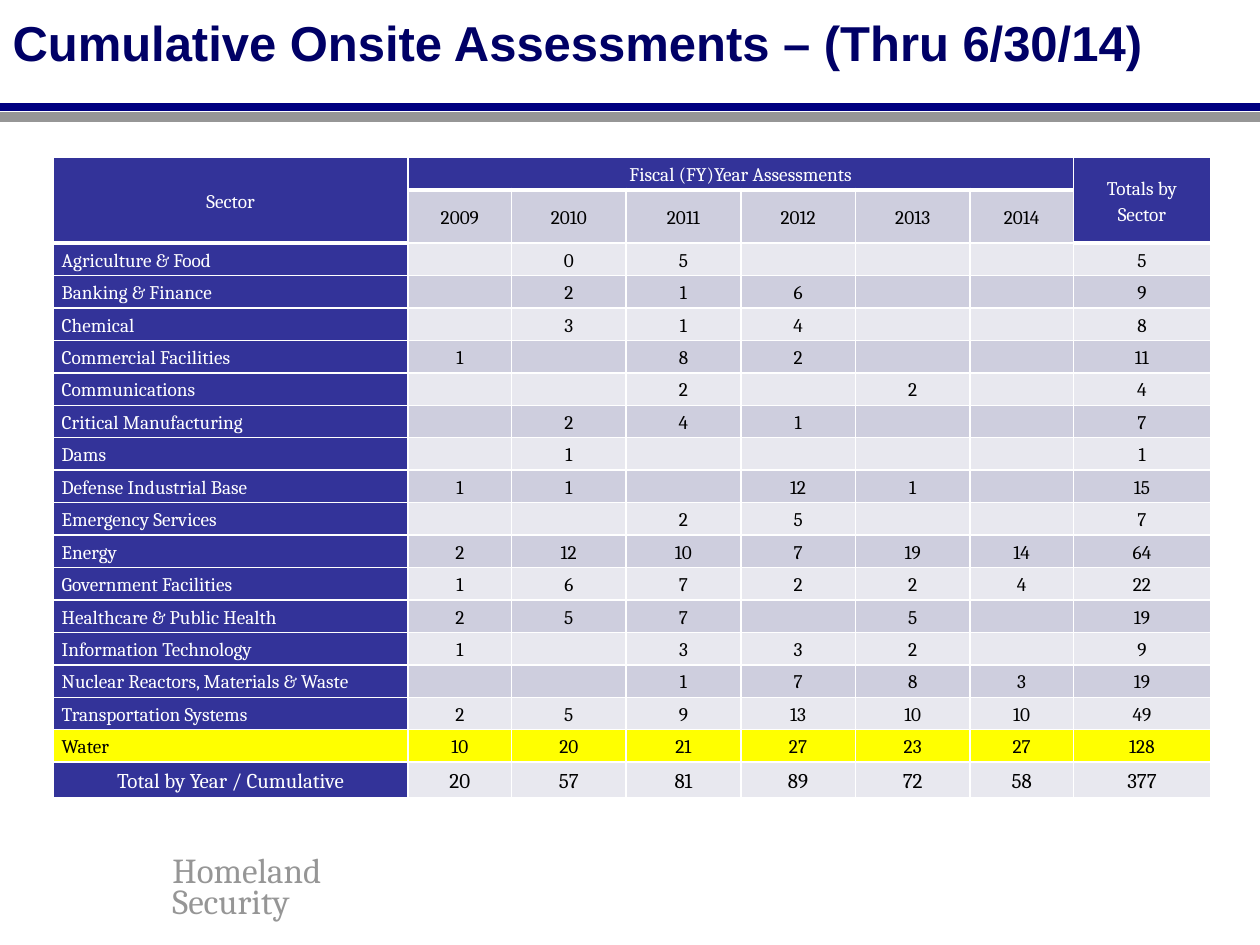
import pptx
import pptx.dml.color
import pptx.enum.shapes
import pptx.enum.text
import pptx.oxml
import pptx.oxml.ns
import pptx.util
from lxml import etree

Inches = pptx.util.Inches
Pt = pptx.util.Pt
ALIGN = pptx.enum.text.PP_ALIGN
ANCHOR = pptx.enum.text.MSO_ANCHOR

COLORS = {
    "title": "000066", "navy": "000080", "gray": "969696", "header": "333399",
    "light": "E8E8EF", "dark": "CECEDE", "highlight": "FFFF00",
    "white": "FFFFFF", "black": "000000",
}
YEARS = ["2009", "2010", "2011", "2012", "2013", "2014"]
SECTORS = {
    "Agriculture & Food": [None, 0, 5, None, None, None],
    "Banking & Finance": [None, 2, 1, 6, None, None],
    "Chemical": [None, 3, 1, 4, None, None],
    "Commercial Facilities": [1, None, 8, 2, None, None],
    "Communications": [None, None, 2, None, 2, None],
    "Critical Manufacturing": [None, 2, 4, 1, None, None],
    "Dams": [None, 1, None, None, None, None],
    "Defense Industrial Base": [1, 1, None, 12, 1, None],
    "Emergency Services": [None, None, 2, 5, None, None],
    "Energy": [2, 12, 10, 7, 19, 14],
    "Government Facilities": [1, 6, 7, 2, 2, 4],
    "Healthcare & Public Health": [2, 5, 7, None, 5, None],
    "Information Technology": [1, None, 3, 3, 2, None],
    "Nuclear Reactors, Materials & Waste": [None, None, 1, 7, 8, 3],
    "Transportation Systems": [2, 5, 9, 13, 10, 10],
    "Water": [10, 20, 21, 27, 23, 27],
}
HIGHLIGHTED = "Water"
COLUMN_WIDTHS = [2.82, 0.82, 0.91, 0.91, 0.91, 0.91, 0.82, 1.09]
TOTAL_ROW_HEIGHT = 0.28


def rgb(color):
    """Return the named color as an RGBColor."""
    return pptx.dml.color.RGBColor.from_string(COLORS[color])


def write_text(frame, text, size=11, font="Cambria", color="black", bold=False,
               align=ALIGN.LEFT, spacing=1.15):
    """Fill a text frame with one formatted paragraph per line of text."""
    for index, line in enumerate(text.split("\n")):
        paragraph = frame.paragraphs[0] if index == 0 else frame.add_paragraph()
        paragraph.alignment = align
        paragraph.line_spacing = spacing
        paragraph.space_before = Pt(0)
        if not line:
            end = pptx.oxml.parse_xml(
                f'<a:endParaRPr {pptx.oxml.ns.nsdecls("a")} sz="{size * 100}"/>')
            paragraph._p.append(end)
            continue
        run = paragraph.add_run()
        run.text = line
        run.font.size = Pt(size)
        run.font.name = font
        run.font.bold = bold
        run.font.color.rgb = rgb(color)


def add_title(slide, left, top, width, height):
    """Place and format the slide title."""
    title = slide.shapes.title
    title.left, title.top = Inches(left), Inches(top)
    title.width, title.height = Inches(width), Inches(height)
    title.text_frame.word_wrap = True
    title.text_frame.auto_size = pptx.enum.text.MSO_AUTO_SIZE.NONE
    title.text_frame.vertical_anchor = ANCHOR.TOP
    write_text(title.text_frame, "Cumulative Onsite Assessments – (Thru 6/30/14)",
               size=28, font="Arial", color="title", bold=True, spacing=0.85)


def add_rules(slide, left, top, width):
    """Draw the gray and navy rules below the title."""
    for offset, color in [(0.08, "gray"), (0, "navy"), (0.07, "gray")]:
        y = Inches(top + offset)
        rule = slide.shapes.add_connector(
            pptx.enum.shapes.MSO_CONNECTOR.STRAIGHT,
            Inches(left), y, Inches(left + width), y)
        rule.line.color.rgb = rgb(color)
        rule.line.width = Pt(5)
        etree.SubElement(rule._element.spPr, pptx.oxml.ns.qn("a:effectLst"))


def add_department(slide, left, top, width, height):
    """Place the department name at the foot of the slide."""
    department = slide.shapes.add_textbox(
        Inches(left), Inches(top), Inches(width), Inches(height))
    frame = department.text_frame
    frame.word_wrap = False
    frame.auto_size = pptx.enum.text.MSO_AUTO_SIZE.SHAPE_TO_FIT_TEXT
    frame.vertical_anchor = ANCHOR.MIDDLE
    write_text(frame, "Homeland\nSecurity", size=20, color="gray", spacing=0.75)


def set_borders(cell, bottom=1):
    """Give a cell white borders, with the bottom width in points."""
    properties = cell._tc.get_or_add_tcPr()
    widths = {"lnL": 1, "lnR": 1, "lnT": 1, "lnB": bottom}
    for index, (side, width) in enumerate(widths.items()):
        properties.insert(index, pptx.oxml.parse_xml(
            f'<a:{side} {pptx.oxml.ns.nsdecls("a")} w="{Pt(width)}"><a:solidFill>'
            f'<a:srgbClr val="{COLORS["white"]}"/></a:solidFill></a:{side}>'))


def fill_cell(cell, text, fill, bottom=1, **text_format):
    """Format one table cell and write its text."""
    cell.fill.solid()
    cell.fill.fore_color.rgb = rgb(fill)
    set_borders(cell, bottom)
    cell.margin_left = cell.margin_right = Inches(0.07)
    cell.margin_top = cell.margin_bottom = 0
    cell.vertical_anchor = ANCHOR.MIDDLE
    if fill == "header":
        text_format["color"] = "white"
    write_text(cell.text_frame, text, **text_format)


def add_assessments(slide, left, top, width, height):
    """Build the table of assessments by sector and fiscal year."""
    row_count = len(SECTORS) + 3
    last = len(YEARS) + 1
    table = slide.shapes.add_table(
        row_count, last + 1, Inches(left), Inches(top), Inches(width), Inches(height)).table
    table.first_row = table.horz_banding = False
    for column, column_width in zip(table.columns, COLUMN_WIDTHS):
        column.width = Inches(column_width)
    for row in table.rows:
        row.height = Inches((height - TOTAL_ROW_HEIGHT) / (row_count - 1))
    table.rows[row_count - 1].height = Inches(TOTAL_ROW_HEIGHT)

    table.cell(0, 0).merge(table.cell(1, 0))
    table.cell(0, 1).merge(table.cell(0, last - 1))
    table.cell(0, last).merge(table.cell(1, last))
    blanks = [""] * (len(YEARS) - 1)
    headings = ["Sector", "Fiscal (FY)Year Assessments", *blanks, "Totals by Sector"]
    for index, heading in enumerate(headings):
        fill_cell(table.cell(0, index), heading, "header", bottom=3, align=ALIGN.CENTER)
    for index, year in enumerate(["", *YEARS, ""]):
        fill = "dark" if year else "header"
        fill_cell(table.cell(1, index), year, fill, align=ALIGN.CENTER)

    for row, (sector, counts) in enumerate(SECTORS.items(), start=2):
        band = "dark" if row % 2 else "light"
        name_fill = "header"
        if sector == HIGHLIGHTED:
            band = name_fill = "highlight"
        fill_cell(table.cell(row, 0), sector, name_fill)
        total = sum(count or 0 for count in counts)
        for index, count in enumerate([*counts, total], start=1):
            text = "" if count is None else str(count)
            fill_cell(table.cell(row, index), text, band, align=ALIGN.CENTER)

    year_totals = [sum(count or 0 for count in counts) for counts in zip(*SECTORS.values())]
    totals = ["Total by Year / Cumulative", *year_totals, sum(year_totals)]
    for index, total in enumerate(totals):
        fill = "light" if index else "header"
        fill_cell(table.cell(row_count - 1, index), str(total), fill,
                  size=12, align=ALIGN.CENTER)


def main():
    """Build and save the slide."""
    deck = pptx.Presentation()
    deck.slide_width, deck.slide_height = Inches(10), Inches(7.5)
    slide = deck.slides.add_slide(deck.slide_layouts[5])
    add_rules(slide, 0, 0.85, 10)
    add_department(slide, 1.27, 6.76, 1.51, 0.6)
    add_title(slide, 0, 0.12, 10, 0.92)
    add_assessments(slide, 0.42, 1.25, 9.17, 4.92)
    deck.save("out.pptx")


if __name__ == "__main__":
    main()
